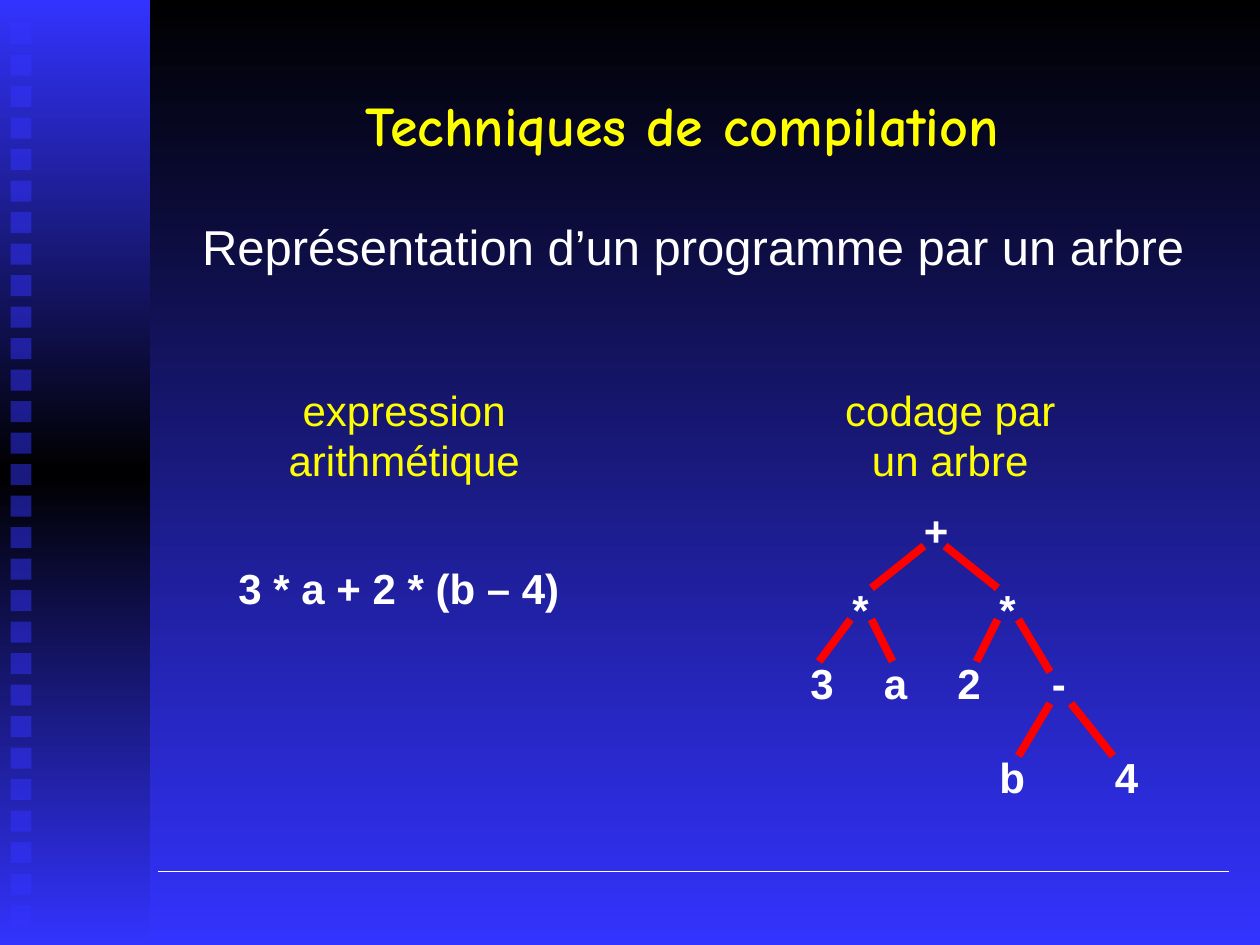
"""Build the slide showing an arithmetic expression and its tree encoding."""
from copy import deepcopy

from lxml.etree import SubElement
from pptx import Presentation
from pptx.dml.color import RGBColor
from pptx.enum.shapes import MSO_CONNECTOR, MSO_SHAPE
from pptx.enum.text import MSO_AUTO_SIZE, PP_ALIGN
from pptx.oxml.ns import qn
from pptx.util import Pt

PX = 7620
BLUE = RGBColor(0x33, 0x33, 0xFF)
BLACK = RGBColor(0, 0, 0)
WHITE = RGBColor(0xFF, 0xFF, 0xFF)
YELLOW = RGBColor(0xFF, 0xFF, 0)
RED = RGBColor(0xFF, 0, 0)

deck = Presentation()
deck.slide_width, deck.slide_height = 1200 * PX, 900 * PX
page = deck.slides.add_slide(deck.slide_layouts[6])


def add_text(text, left, top, width, height, size, color, bold=False, font="Arial", wrap=True):
    box = page.shapes.add_textbox(left * PX, top * PX, width * PX, height * PX)
    box.text_frame.word_wrap = wrap
    box.text_frame.auto_size = MSO_AUTO_SIZE.SHAPE_TO_FIT_TEXT
    para = box.text_frame.paragraphs[0]
    para.alignment = PP_ALIGN.CENTER if wrap else PP_ALIGN.LEFT
    span = para.add_run()
    span.text = text
    span.font.name = font
    span.font.size = Pt(size)
    span.font.bold = bold
    span.font.color.rgb = color
    return box


def add_line(start_x, start_y, end_x, end_y, color, width):
    line = page.shapes.add_connector(
        MSO_CONNECTOR.STRAIGHT, start_x * PX, start_y * PX, end_x * PX, end_y * PX)
    line.line.color.rgb = color
    line.line.width = Pt(width)
    SubElement(line._element.spPr, qn("a:effectLst"))


backdrop = page.background.fill
backdrop.gradient()
backdrop.gradient_angle = 270
for stop, color in zip(backdrop.gradient_stops, (BLACK, BLUE)):
    stop.color.rgb = color

band = page.shapes.add_shape(MSO_SHAPE.RECTANGLE, 0, 0, 143 * PX, 900 * PX)
band.shadow.inherit = False
band.line.fill.background()
band.fill.gradient()
band.fill.gradient_angle = 270
stop_list = band._element.spPr.find(".//" + qn("a:gsLst"))
stop_list.insert(1, deepcopy(stop_list[0]))
for stop, position, color in zip(band.fill.gradient_stops, (0, 0.5, 1), (BLUE, BLACK, BLUE)):
    stop.position = position
    stop.color.rgb = color

for row in range(29):
    square = page.shapes.add_shape(
        MSO_SHAPE.RECTANGLE, 10 * PX, (22 + 30 * row) * PX, 20 * PX, 20 * PX)
    square.shadow.inherit = False
    square.line.fill.background()
    square.fill.solid()
    square.fill.fore_color.rgb = BLUE
    tint = square._element.spPr.find(qn("a:solidFill"))[0]
    SubElement(tint, qn("a:alpha"), val="50000")

add_line(150, 830, 1170, 830, WHITE, 1)

title = add_text("Techniques de compilation", 140, 80, 1020, 114, 32, YELLOW, True, "Comic Neue")
title.text_frame.auto_size = MSO_AUTO_SIZE.NONE
title.text_frame.paragraphs[0].space_before = Pt(6)

add_text("Représentation d’un programme par un arbre", 140, 200, 1040, 68, 28, WHITE)
add_text("expression arithmétique", 260, 360, 250, 108, 24, YELLOW)
add_text("3 * a + 2 * (b – 4)", 200, 530, 360, 60, 24, WHITE, True)
add_text("codage par un arbre", 780, 360, 250, 108, 24, YELLOW)

nodes = [
    ("+", 868, 475, 48),
    ("*", 800, 550, 40), ("*", 940, 550, 40),
    ("3", 760, 620, 47), ("a", 830, 620, 47), ("2", 900, 620, 47), ("-", 990, 620, 37),
    ("b", 940, 710, 48), ("4", 1050, 710, 47),
]
for label, left, top, width in nodes:
    add_text(label, left, top, width, 60, 24, WHITE, True, wrap=False)

branches = [
    (880, 520, 830, 560), (900, 520, 950, 560),
    (970, 590, 1000, 640), (950, 590, 930, 630),
    (830, 590, 850, 630), (810, 590, 780, 630),
    (1000, 670, 970, 720), (1020, 670, 1060, 720),
]
for branch in branches:
    add_line(*branch, RED, 4.5)

deck.save("out.pptx")
